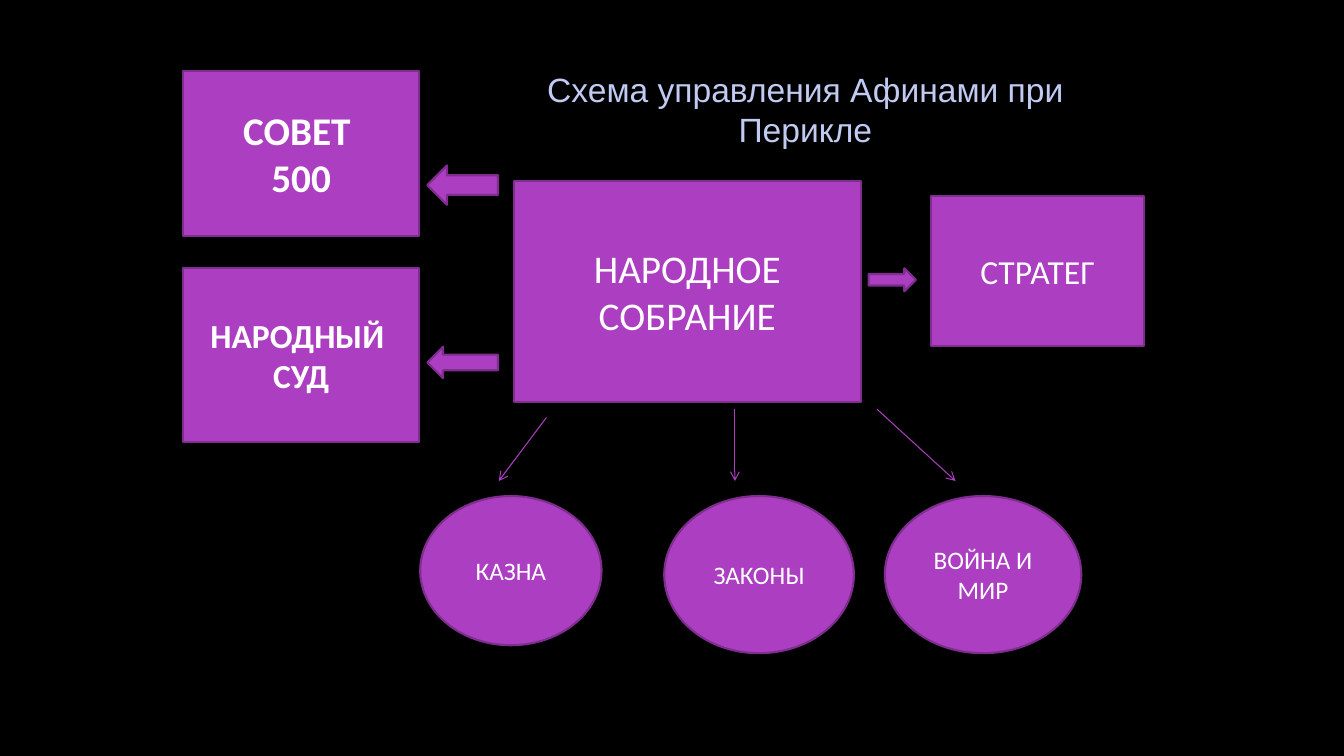
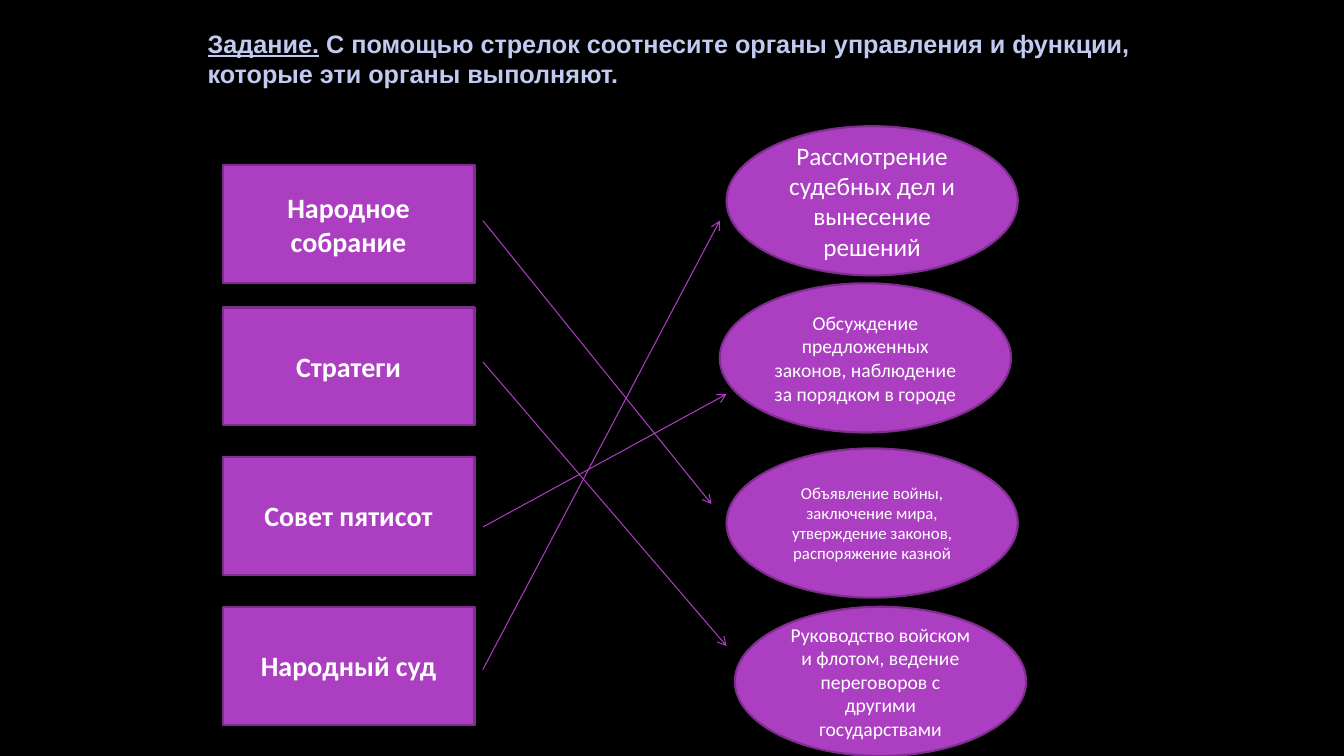
from dataclasses import dataclass

from pptx import Presentation
from pptx.dml.color import RGBColor
from pptx.enum.shapes import MSO_CONNECTOR, MSO_SHAPE
from pptx.enum.text import MSO_ANCHOR, MSO_AUTO_SIZE, PP_ALIGN
from pptx.oxml.ns import qn
from pptx.slide import Slide
from pptx.util import Cm, Pt
from lxml.etree import SubElement

COLORS = {
    "background": "000000",
    "fill": "AC3EC1",
    "outline": "7F2E8F",
    "label": "FFFFFF",
    "title": "C1CAF1",
}
RECT, OVAL = MSO_SHAPE.RECTANGLE, MSO_SHAPE.OVAL
LEFT, RIGHT = MSO_SHAPE.LEFT_ARROW, MSO_SHAPE.RIGHT_ARROW


@dataclass
class Node:
    """A filled shape, in centimetres; each line of text is a paragraph."""
    kind: MSO_SHAPE
    x: float
    y: float
    w: float
    h: float
    lines: tuple[str, ...] = ()
    size: float = 18
    bold: bool = False


@dataclass
class Link:
    """A thin arrow between two points, in centimetres."""
    x1: float
    y1: float
    x2: float
    y2: float


@dataclass
class Title:
    x: float
    y: float
    w: float
    h: float
    runs: tuple[tuple[str, dict], ...]
    align: PP_ALIGN
    size: float


def rgb(name: str) -> RGBColor:
    return RGBColor.from_string(COLORS[name])


def style_font(font, color: str, **values) -> None:
    for key, value in values.items():
        setattr(font, key, value)
    font.color.rgb = rgb(color)


def add_title(s: Slide, title: Title) -> None:
    sp = s.shapes.title
    place = {"left": title.x, "top": title.y, "width": title.w, "height": title.h}
    for key, value in place.items():
        setattr(sp, key, Cm(value))
    tf = sp.text_frame
    frame = {"word_wrap": True, "auto_size": MSO_AUTO_SIZE.NONE,
             "vertical_anchor": MSO_ANCHOR.TOP}
    for key, value in frame.items():
        setattr(tf, key, value)
    p = tf.paragraphs[0]
    p.alignment = title.align
    for text, extra in title.runs:
        r = p.add_run()
        r.text = text
        style_font(r.font, "title", name="Arial", size=Pt(title.size), **extra)


def add_node(s: Slide, node: Node) -> None:
    sp = s.shapes.add_shape(node.kind, Cm(node.x), Cm(node.y), Cm(node.w), Cm(node.h))
    sp.shadow.inherit = False
    sp.fill.solid()
    sp.fill.fore_color.rgb = rgb("fill")
    sp.line.color.rgb = rgb("outline")
    sp.line.width = Pt(1.5)
    tf = sp.text_frame
    tf.word_wrap = True
    tf.vertical_anchor = MSO_ANCHOR.MIDDLE
    for i, line in enumerate(node.lines):
        p = tf.add_paragraph() if i else tf.paragraphs[0]
        p.alignment = PP_ALIGN.CENTER
        r = p.add_run()
        r.text = line
        style_font(r.font, "label", name="Calibri", size=Pt(node.size), bold=node.bold)


def add_link(s: Slide, link: Link) -> None:
    line = s.shapes.add_connector(MSO_CONNECTOR.STRAIGHT, Cm(link.x1), Cm(link.y1),
                                  Cm(link.x2), Cm(link.y2))
    line.line.color.rgb = rgb("fill")
    line.line.width = Pt(0.75)
    SubElement(line.line._get_or_add_ln(), qn("a:tailEnd"), type="arrow")
    SubElement(line._element.spPr, qn("a:effectLst"))


def add_slide(prs: Presentation, title: Title, nodes: list[Node], links: list[Link]) -> None:
    s = prs.slides.add_slide(prs.slide_layouts[5])
    add_title(s, title)
    for node in nodes:
        add_node(s, node)
    for link in links:
        add_link(s, link)


# Slide 1: scheme of government
SCHEME_TITLE = Title(13.16, 1.6, 14.27, 2.31,
                     (("Схема управления Афинами при Перикле", {}),), PP_ALIGN.CENTER, 24)
SCHEME_NODES = [
    Node(RECT, 12.95, 4.57, 8.74, 5.56, ("НАРОДНОЕ СОБРАНИЕ",), 28),
    Node(RECT, 4.62, 1.78, 5.94, 4.17, ("СОВЕТ ", "500"), 28, True),
    Node(RECT, 4.62, 6.76, 5.94, 4.37, ("НАРОДНЫЙ ", "СУД"), 24, True),
    Node(RECT, 23.47, 4.95, 5.36, 3.76, ("СТРАТЕГ",), 24),
    Node(OVAL, 10.59, 12.5, 4.57, 3.76, ("КАЗНА",)),
    Node(OVAL, 16.74, 12.5, 4.78, 3.96, ("ЗАКОНЫ",)),
    Node(OVAL, 22.3, 12.5, 4.95, 3.96, ("ВОЙНА И МИР",)),
    Node(RIGHT, 21.89, 6.76, 1.19, 0.58),
    Node(LEFT, 10.77, 4.17, 1.78, 0.99),
    Node(LEFT, 10.77, 8.74, 1.78, 0.79),
]
SCHEME_LINKS = [
    Link(13.77, 10.52, 12.57, 12.12),
    Link(18.52, 10.31, 18.52, 12.12),
    Link(22.1, 10.31, 24.08, 12.12),
]

# Slide 2: matching task
TASK_TITLE = Title(4.98, 0.58, 23.83, 2.57, (
    ("Задание.", {"bold": True, "underline": True}),
    (" С помощью стрелок соотнесите органы управления и функции, "
     "которые эти органы выполняют.", {"bold": True}),
), PP_ALIGN.LEFT, 18)
BODIES = [
    (4.17, "Народное собрание"),
    (7.75, "Стратеги"),
    (11.51, "Совет пятисот"),
    (15.29, "Народный суд"),
]
DUTIES = [
    (18.31, 3.18, 18, "Рассмотрение судебных дел и вынесение решений"),
    (18.14, 7.14, 14, "Обсуждение предложенных законов, наблюдение за порядком в городе"),
    (18.31, 11.3, 12, "Объявление войны, заключение мира, утверждение законов, "
                      "распоряжение казной"),
    (18.52, 15.29, 14, "Руководство войском и флотом, ведение переговоров "
                       "с другими государствами"),
]
TASK_NODES = [Node(RECT, 5.61, y, 6.35, 2.97, (text,), 20, True) for y, text in BODIES]
TASK_NODES += [Node(OVAL, x, y, 7.34, 3.76, (text,), size) for x, y, size, text in DUTIES]
TASK_LINKS = [Link(12.17, y1, x2, y2) for y1, x2, y2 in (
    (5.56, 17.93, 12.7),
    (9.12, 18.31, 16.28),
    (13.28, 18.31, 9.93),
    (16.87, 18.14, 5.56),
)]


def main() -> None:
    prs = Presentation()
    prs.slide_width, prs.slide_height = Cm(33.87), Cm(19.05)
    # Shared black background
    fill = prs.slide_master.background.fill
    fill.solid()
    fill.fore_color.rgb = rgb("background")
    add_slide(prs, SCHEME_TITLE, SCHEME_NODES, SCHEME_LINKS)
    add_slide(prs, TASK_TITLE, TASK_NODES, TASK_LINKS)
    prs.save("out.pptx")


if __name__ == "__main__":
    main()
